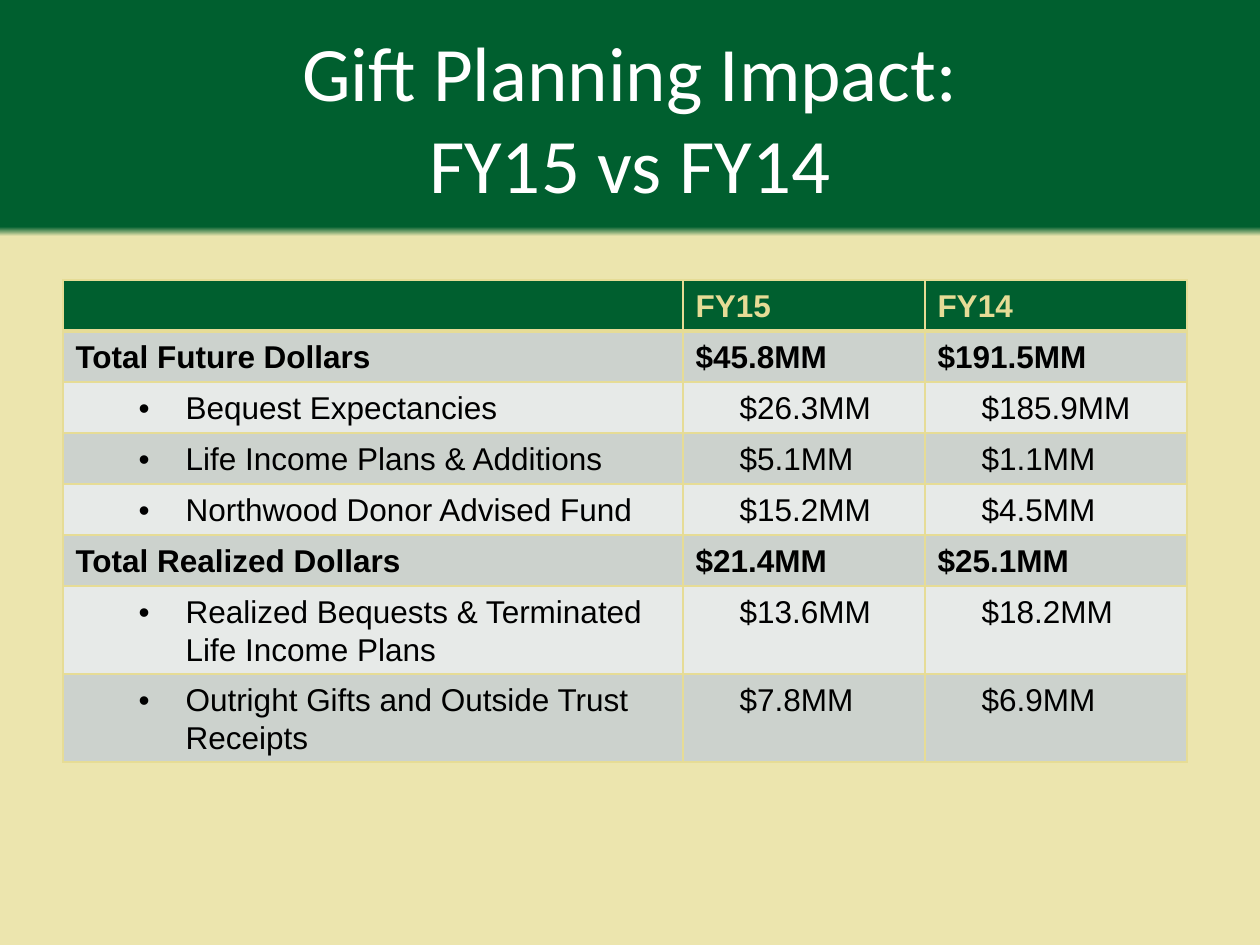
from lxml.etree import SubElement
from pptx import Presentation
from pptx.dml.color import RGBColor
from pptx.enum.text import MSO_ANCHOR, MSO_AUTO_SIZE, PP_ALIGN
from pptx.oxml.ns import qn
from pptx.util import Emu, Pt

PX_PER_INCH = 126
GREEN, CREAM, GOLD = "005F2F", "ECE5AE", "E6DC96"
BAND_DARK, BAND_LIGHT = "CCD2CD", "E7EAE8"

COLUMN_WIDTHS = [620, 242, 262]
ROW_HEIGHTS = [51] * 6 + [88] * 2
AMOUNT_INDENT = 44
BULLET_INDENT, BULLET_HANG = 110, 47

HEADINGS = ["", "FY15", "FY14"]
# Each total is followed by the gifts that make it up.
GIFT_GROUPS = [
    (["Total Future Dollars", "$45.8MM", "$191.5MM"], [
        ["Bequest Expectancies", "$26.3MM", "$185.9MM"],
        ["Life Income Plans & Additions", "$5.1MM", "$1.1MM"],
        ["Northwood Donor Advised Fund", "$15.2MM", "$4.5MM"],
    ]),
    (["Total Realized Dollars", "$21.4MM", "$25.1MM"], [
        ["Realized Bequests & Terminated Life Income Plans", "$13.6MM", "$18.2MM"],
        ["Outright Gifts and Outside Trust Receipts", "$7.8MM", "$6.9MM"],
    ]),
]


def px(length):
    return Emu(round(length * 914400 / PX_PER_INCH))


def rgb(hex_color):
    return RGBColor.from_string(hex_color)


def write(frame, text, *, size=18, font="Arial", color="000000", bold=False,
          align=PP_ALIGN.LEFT, spacing=None):
    """Fill the frame with one formatted paragraph and return it."""
    frame.text = text
    paragraph = frame.paragraphs[0]
    paragraph.alignment = align
    paragraph.line_spacing = spacing
    for run in paragraph.runs:
        run.font.size = Pt(size)
        run.font.name = font
        run.font.bold = bold
        run.font.color.rgb = rgb(color)
    return paragraph


def indent(paragraph, left, hang=0, bullet=None):
    properties = paragraph._p.get_or_add_pPr()
    properties.set("marL", str(px(left)))
    properties.set("indent", str(-px(hang)))
    if bullet:
        SubElement(properties, qn("a:buFont")).set("typeface", "Arial")
        SubElement(properties, qn("a:buChar")).set("char", bullet)


def style_cell(cell, fill, bottom_width=1):
    """Draw gold borders, then fill the cell."""
    properties = cell._tc.get_or_add_tcPr()
    for side, width in (("L", 1), ("R", 1), ("T", 1), ("B", bottom_width)):
        border = SubElement(properties, qn(f"a:ln{side}"))
        border.set("w", str(Pt(width)))
        solid = SubElement(border, qn("a:solidFill"))
        SubElement(solid, qn("a:srgbClr")).set("val", GOLD)
    cell.fill.solid()
    cell.fill.fore_color.rgb = rgb(fill)


def paint_background(slide):
    fill = slide.background.fill
    fill.gradient()
    fill.gradient_angle = 270
    for stop, position, color in zip(fill.gradient_stops, (0.24, 0.25), (GREEN, CREAM)):
        stop.position = position
        stop.color.rgb = rgb(color)


def add_title(slide, text):
    title = slide.shapes.title
    title.left, title.top, title.width, title.height = map(px, (63, 38, 1134, 158))
    frame = title.text_frame
    frame.auto_size = MSO_AUTO_SIZE.NONE
    frame.vertical_anchor = MSO_ANCHOR.MIDDLE
    write(frame, text, size=44, font="Calibri", color="FFFFFF", align=PP_ALIGN.CENTER)


def fill_row(table, row, texts, fill, *, color="000000", bold=True, detail=False,
             bottom_width=1):
    for column, text in enumerate(texts):
        cell = table.cell(row, column)
        style_cell(cell, fill, bottom_width)
        paragraph = write(cell.text_frame, text, color=color, bold=bold, spacing=1.07)
        if detail and column == 0:
            paragraph.level = 1
            indent(paragraph, BULLET_INDENT, BULLET_HANG, "•")
        elif detail:
            indent(paragraph, AMOUNT_INDENT)


def add_gift_table(slide):
    table = slide.shapes.add_table(
        len(ROW_HEIGHTS), len(COLUMN_WIDTHS), px(63), px(280),
        px(sum(COLUMN_WIDTHS)), px(sum(ROW_HEIGHTS))).table
    for column, width in zip(table.columns, COLUMN_WIDTHS):
        column.width = px(width)
    for row, height in zip(table.rows, ROW_HEIGHTS):
        row.height = px(height)

    fill_row(table, 0, HEADINGS, GREEN, color=GOLD, bottom_width=3)
    gift_rows = []
    for total, details in GIFT_GROUPS:
        gift_rows.append((total, False))
        gift_rows.extend((detail, True) for detail in details)
    for row, (texts, is_detail) in enumerate(gift_rows, start=1):
        band = BAND_DARK if row % 2 else BAND_LIGHT
        fill_row(table, row, texts, band, bold=not is_detail, detail=is_detail)


def main():
    presentation = Presentation()
    presentation.slide_width, presentation.slide_height = px(1260), px(945)
    slide = presentation.slides.add_slide(presentation.slide_layouts[5])
    paint_background(slide)
    add_title(slide, "Gift Planning Impact:\vFY15 vs FY14")
    add_gift_table(slide)
    presentation.save("out.pptx")


if __name__ == "__main__":
    main()
